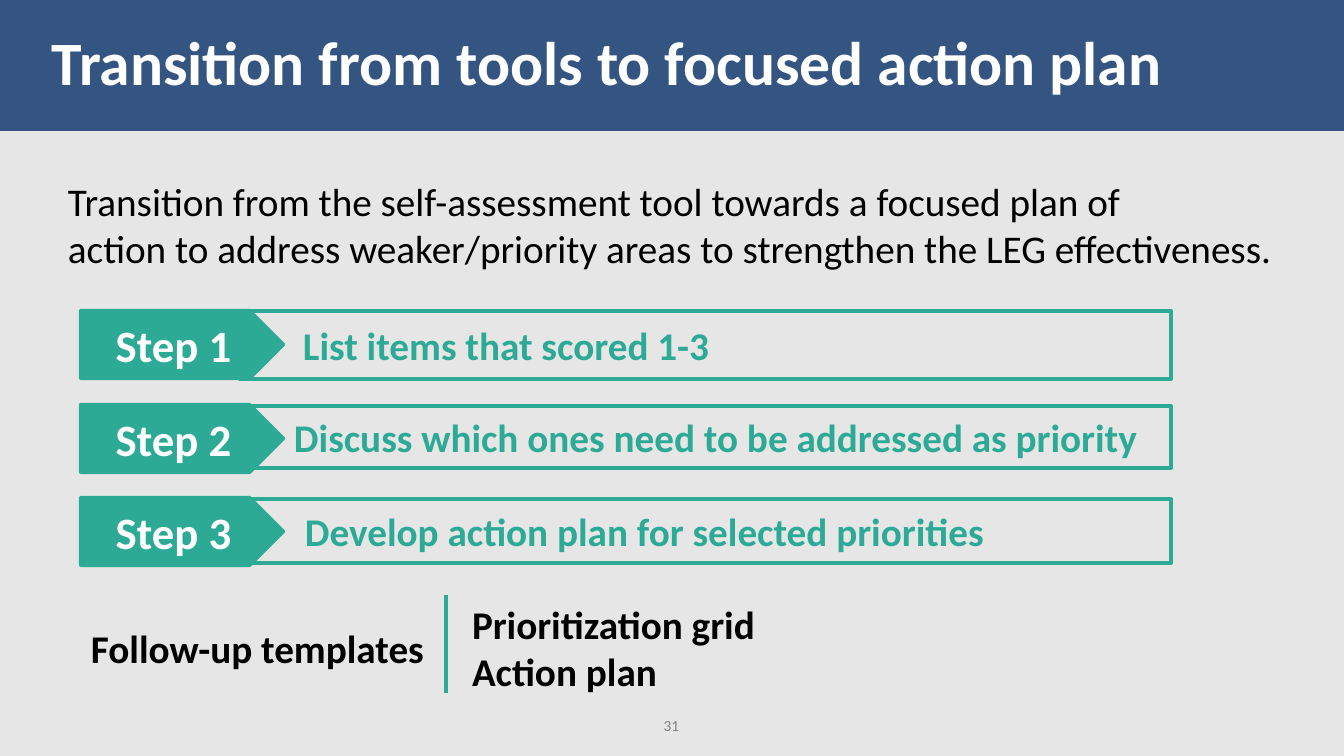
from dataclasses import dataclass

from lxml.etree import SubElement
from pptx import Presentation
from pptx.dml.color import RGBColor
from pptx.enum.shapes import MSO_CONNECTOR, MSO_SHAPE
from pptx.enum.text import MSO_ANCHOR, PP_ALIGN
from pptx.oxml.ns import qn
from pptx.util import Pt

EMU_PER_PX = 914400 / 100.8
SLIDE_WIDTH, SLIDE_HEIGHT = 1344, 756


def px(length):
    return round(length * EMU_PER_PX)


@dataclass(frozen=True)
class Theme:
    font: str = "Calibri"
    background: str = "E7E6E6"
    banner: str = "345482"
    accent: str = "2CAA96"
    light: str = "FFFFFF"
    dark: str = "000000"
    muted: str = "808080"
    title_size: int = 44
    step_size: int = 32
    body_size: int = 28
    number_size: int = 11
    line_width: int = 3


def write_text(shape, text, *, font, size, color, bold=False, align=PP_ALIGN.LEFT,
               anchor=MSO_ANCHOR.MIDDLE, inset=10, spacing=None):
    """Fill a shape with one paragraph per line of text."""
    frame = shape.text_frame
    frame.word_wrap = True
    frame.vertical_anchor = anchor
    frame.margin_left, frame.margin_right = px(inset), px(10)
    frame.margin_top = frame.margin_bottom = px(5)
    frame.text = text
    for paragraph in frame.paragraphs:
        paragraph.alignment = align
        if spacing:
            paragraph.line_spacing = spacing
        paragraph.font.name = font
        paragraph.font.size = Pt(size)
        paragraph.font.bold = bold
        paragraph.font.color.rgb = RGBColor.from_string(color)


class SlideBuilder:
    def __init__(self, slide, theme):
        self.slide = slide
        self.theme = theme
        fill = slide.background.fill
        fill.solid()
        fill.fore_color.rgb = RGBColor.from_string(theme.background)

    def shape(self, kind, box, text, *, fill=None, line=None, **text_format):
        shape = self.slide.shapes.add_shape(kind, *map(px, box))
        shape.shadow.inherit = False
        if fill:
            shape.fill.solid()
            shape.fill.fore_color.rgb = RGBColor.from_string(fill)
        else:
            shape.fill.background()
        if line:
            shape.line.color.rgb = RGBColor.from_string(line)
            shape.line.width = Pt(self.theme.line_width)
        else:
            shape.line.fill.background()
        write_text(shape, text, font=self.theme.font, **text_format)

    def text(self, box, text, **text_format):
        shape = self.slide.shapes.add_textbox(*map(px, box))
        write_text(shape, text, font=self.theme.font, anchor=MSO_ANCHOR.TOP, **text_format)

    def line(self, start, end):
        connector = self.slide.shapes.add_connector(
            MSO_CONNECTOR.STRAIGHT, *map(px, (*start, *end)))
        connector.line.color.rgb = RGBColor.from_string(self.theme.accent)
        connector.line.width = Pt(self.theme.line_width)
        SubElement(connector._element.spPr, qn("a:effectLst"))


def main():
    presentation = Presentation()
    presentation.slide_width, presentation.slide_height = px(SLIDE_WIDTH), px(SLIDE_HEIGHT)
    slide = presentation.slides.add_slide(presentation.slide_layouts[6])
    theme = Theme()
    builder = SlideBuilder(slide, theme)

    # Title banner
    builder.shape(MSO_SHAPE.RECTANGLE, (0, 0, SLIDE_WIDTH, 131),
                  "Transition from tools to focused action plan", fill=theme.banner,
                  size=theme.title_size, color=theme.light, bold=True, inset=52, spacing=0.9)

    # Introduction
    builder.text((58, 172, 1228, 105),
                 "Transition from the self-assessment tool towards a focused plan of\n"
                 "action to address weaker/priority areas to strengthen the LEG effectiveness.",
                 size=theme.body_size, color=theme.dark)

    # Steps: arrow top, then bar left, top and height, then text left and wording
    steps = [
        (311, 240, 311, 68, 303, "List items that scored 1-3"),
        (405, 240, 406, 62, 294, "Discuss which ones need to be addressed as priority"),
        (498, 224, 499, 64, 305, "Develop action plan for selected priorities"),
    ]
    bar_right = 1171
    for number, (arrow_top, left, top, height, text_left, wording) in enumerate(steps, 1):
        builder.shape(MSO_SHAPE.RECTANGLE, (left, top, bar_right - left, height), wording,
                      line=theme.accent, size=theme.body_size, color=theme.accent,
                      bold=True, inset=text_left - left)
        builder.shape(MSO_SHAPE.PENTAGON, (81, arrow_top, 202, 67), f"Step {number}",
                      fill=theme.accent, line=theme.accent, size=theme.step_size,
                      color=theme.light, bold=True, align=PP_ALIGN.CENTER)

    # Follow-up templates
    follow_up = dict(size=theme.body_size, color=theme.dark, bold=True)
    builder.text((81, 619, 369, 57), "Follow-up templates", **follow_up)
    builder.line((446, 595), (446, 693))
    builder.text((462, 595, 316, 105), "Prioritization grid\nAction plan", **follow_up)

    # Slide number
    builder.text((644, 711, 55, 29), "31", size=theme.number_size, color=theme.muted,
                 align=PP_ALIGN.CENTER)

    presentation.save("out.pptx")


if __name__ == "__main__":
    main()
